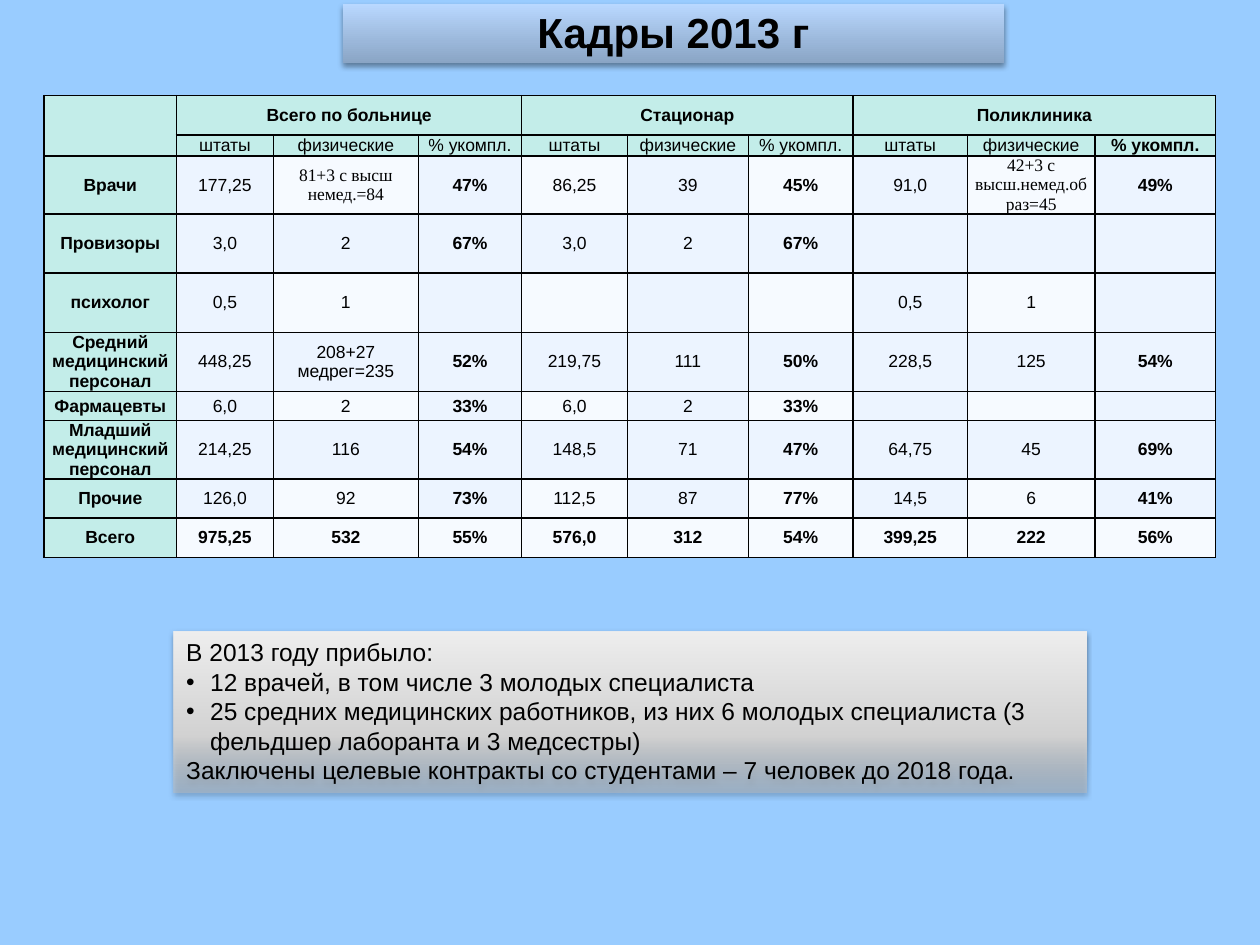
from lxml.etree import SubElement
from pptx import Presentation
from pptx.dml.color import RGBColor
from pptx.enum.shapes import MSO_SHAPE as Shape
from pptx.enum.text import MSO_ANCHOR as Anchor, PP_ALIGN as Align
from pptx.oxml import parse_xml
from pptx.oxml.ns import nsdecls, qn
from pptx.util import Inches, Pt

COLORS = {
    "background": "99CCFF", "text": "000000", "header": "C3EDE9",
    "band": "ECF4FF", "light": "F6FAFF", "shadow": "000000",
    "title_low": "8AA5C5", "title_high": "B9D8FF",
    "note_low": "BDBDBD", "note_middle": "D1D1D1", "note_high": "EEEEEE",
}
TITLE_STOPS = [(0, "title_low", 100), (100, "title_high", 100)]
NOTE_STOPS = [(0, "note_low", 46), (35, "note_middle", 100), (100, "note_high", 100)]
COLUMN_WIDTHS = [1.05, 0.77, 1.15, 0.82, 0.84, 0.96, 0.83, 0.91, 1.01, 0.96]
ROW_HEIGHTS = [0.31, 0.13, 0.36, 0.47, 0.47, 0.47, 0.23, 0.23, 0.31, 0.31]
GROUPS = ["Всего по больнице", "Стационар", "Поликлиника"]
MEASURES = ["штаты", "физические", "% укомпл."]
STAFF = [
    ["Врачи", "177,25", "81+3 с высш немед.=84", "47%", "86,25", "39", "45%",
     "91,0", "42+3 с высш.немед.образ=45", "49%"],
    ["Провизоры", "3,0", "2", "67%", "3,0", "2", "67%", "", "", ""],
    ["психолог", "0,5", "1", "", "", "", "", "0,5", "1", ""],
    ["Средний медицинский персонал", "448,25", "208+27 медрег=235", "52%",
     "219,75", "111", "50%", "228,5", "125", "54%"],
    ["Фармацевты", "6,0", "2", "33%", "6,0", "2", "33%", "", "", ""],
    ["Младший медицинский персонал", "214,25", "116", "54%", "148,5", "71",
     "47%", "64,75", "45", "69%"],
    ["Прочие", "126,0", "92", "73%", "112,5", "87", "77%", "14,5", "6", "41%"],
    ["Всего", "975,25", "532", "55%", "576,0", "312", "54%", "399,25", "222", "56%"],
]
SERIF_CELLS = {(2, 2), (2, 8)}
NOTE = [
    ("В 2013 году прибыло:", False),
    ("12 врачей, в том числе 3 молодых специалиста", True),
    ("25 средних медицинских работников, из них 6 молодых специалиста "
     "(3 фельдшер лаборанта и 3 медсестры)", True),
    ("Заключены целевые контракты со студентами – 7 человек до 2018 года.", False),
]


class StaffSlide:
    font = "Arial"

    def __init__(self, deck):
        self.slide = deck.slides.add_slide(deck.slide_layouts[0])
        self.paint(self.slide.background.fill, "background")
        subtitle = self.slide.placeholders[1].element
        subtitle.getparent().remove(subtitle)

    def paint(self, fill, name):
        fill.solid()
        fill.fore_color.rgb = RGBColor.from_string(COLORS[name])

    def add_span(self, para, text, size, bold=False, font=None):
        span = para.add_run()
        span.text = text
        span.font.name = font or self.font
        span.font.size = Pt(size)
        span.font.bold = bold
        span.font.color.rgb = RGBColor.from_string(COLORS["text"])

    def panel(self, shape, stops):
        marks = "".join(
            f'<a:gs pos="{place * 1000}"><a:srgbClr val="{COLORS[name]}">'
            f'<a:alpha val="{alpha * 1000}"/></a:srgbClr></a:gs>'
            for place, name, alpha in stops)
        gradient = parse_xml(
            f'<a:gradFill {nsdecls("a")} rotWithShape="1"><a:gsLst>{marks}</a:gsLst>'
            '<a:lin ang="16200000" scaled="0"/></a:gradFill>')
        shape.fill.background()
        shape.line.fill.background()
        shape.shadow.inherit = False
        properties = shape.element.spPr
        properties.replace(properties.find(qn("a:noFill")), gradient)
        properties.find(qn("a:effectLst")).append(parse_xml(
            f'<a:outerShdw {nsdecls("a")} blurRad="{int(Pt(3.1))}" '
            f'dist="{int(Pt(1.6))}" dir="5400000" rotWithShape="0">'
            f'<a:srgbClr val="{COLORS["shadow"]}">'
            '<a:alpha val="38000"/></a:srgbClr></a:outerShdw>'))

    def title(self, text, left, top, width, height):
        box = self.slide.shapes.title
        box.left, box.top = Inches(left), Inches(top)
        box.width, box.height = Inches(width), Inches(height)
        self.panel(box, TITLE_STOPS)
        box.text_frame.vertical_anchor = Anchor.BOTTOM
        para = box.text_frame.paragraphs[0]
        para.alignment = Align.CENTER
        self.add_span(para, text, 24, bold=True)

    def border(self, cell):
        properties = cell._tc.get_or_add_tcPr()
        for place, side in enumerate(("lnL", "lnR", "lnT", "lnB")):
            properties.insert(place, parse_xml(
                f'<a:{side} {nsdecls("a")} w="{int(Pt(1))}"><a:solidFill>'
                f'<a:srgbClr val="{COLORS["text"]}"/></a:solidFill></a:{side}>'))

    def cell(self, cell, text, fill, bold, font):
        self.paint(cell.fill, fill)
        self.border(cell)
        cell.vertical_anchor = Anchor.MIDDLE
        cell.margin_left = cell.margin_right = Inches(0.05)
        cell.margin_top = cell.margin_bottom = 0
        para = cell.text_frame.paragraphs[0]
        para.alignment = Align.CENTER
        if text:
            self.add_span(para, text, 10, bold, font)
        else:
            SubElement(para._p, qn("a:endParaRPr"), sz="1000")

    def table(self, rows, left, top):
        frame = self.slide.shapes.add_table(
            len(rows), len(COLUMN_WIDTHS), Inches(left), Inches(top),
            Inches(sum(COLUMN_WIDTHS)), Inches(sum(ROW_HEIGHTS)))
        table = frame.table
        for column, width in zip(table.columns, COLUMN_WIDTHS):
            column.width = Inches(width)
        for row, height in zip(table.rows, ROW_HEIGHTS):
            row.height = Inches(height)
        last_row, last_column = len(rows) - 1, len(COLUMN_WIDTHS) - 1
        for r, texts in enumerate(rows):
            for c, text in enumerate(texts):
                if r < 2 or c == 0:
                    fill = "header"
                elif r == last_row or (r % 2 == 0 and c % 2 == 0):
                    fill = "light"
                else:
                    fill = "band"
                if r == 1:
                    bold = c == last_column
                else:
                    bold = r in (0, last_row) or c % 3 == 0
                font = "Times New Roman" if (r, c) in SERIF_CELLS else None
                self.cell(table.cell(r, c), text, fill, bold, font)
        table.cell(0, 0).merge(table.cell(1, 0))
        for c in range(1, last_column, 3):
            table.cell(0, c).merge(table.cell(0, c + 2))

    def note(self, lines, left, top, width, height):
        box = self.slide.shapes.add_shape(
            Shape.RECTANGLE, Inches(left), Inches(top), Inches(width), Inches(height))
        self.panel(box, NOTE_STOPS)
        frame = box.text_frame
        frame.word_wrap = True
        frame.vertical_anchor = Anchor.TOP
        for index, (text, bulleted) in enumerate(lines):
            para = frame.add_paragraph() if index else frame.paragraphs[0]
            para.alignment = Align.LEFT
            if bulleted:
                properties = para._p.get_or_add_pPr()
                indent = int(Inches(0.19))
                properties.set("marL", str(indent))
                properties.set("indent", str(-indent))
                SubElement(properties, qn("a:buFont"), typeface=self.font)
                SubElement(properties, qn("a:buChar"), char="•")
            self.add_span(para, text, 14)


def main():
    deck = Presentation()
    deck.slide_width, deck.slide_height = Inches(10), Inches(7.5)
    page = StaffSlide(deck)
    page.title("Кадры 2013 г", 2.72, 0.03, 5.25, 0.47)
    group_row = [""] + [text for group in GROUPS for text in (group, "", "")]
    measure_row = [""] + MEASURES * len(GROUPS)
    page.table([group_row, measure_row] + STAFF, 0.35, 0.76)
    page.note(NOTE, 1.38, 5.01, 7.24, 1.28)
    deck.save("out.pptx")


if __name__ == "__main__":
    main()
